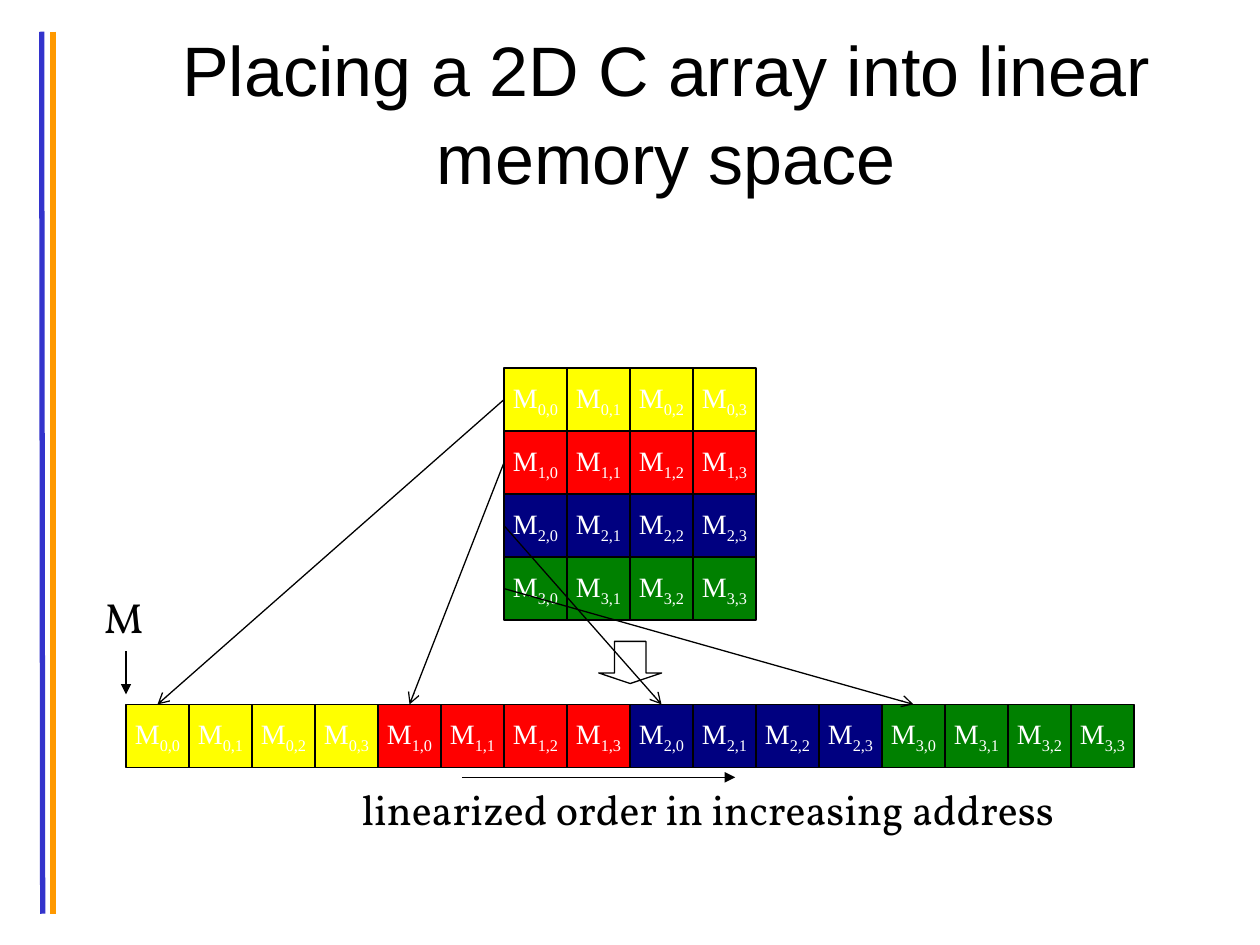
from lxml.etree import SubElement
from pptx import Presentation
from pptx.dml.color import RGBColor
from pptx.enum.shapes import MSO_CONNECTOR, MSO_SHAPE
from pptx.enum.text import MSO_ANCHOR, PP_ALIGN
from pptx.oxml.ns import qn
from pptx.util import Cm, Pt

SIDE = 1.27  # cell side, in cm
COUNT = 4    # rows and columns of the array
ROWS = ["FFFF00", "FF0000", "000080", "008000"]
BLACK, WHITE = "000000", "FFFFFF"


def color(code):
    return RGBColor.from_string(code)


def add_run(para, text, size, font, code, base=None):
    run = para.add_run()
    run.text = text
    run.font.size = Pt(size)
    run.font.name = font
    run.font.color.rgb = color(code)
    if base:
        run.font._element.set("baseline", str(base))


def add_line(slide, start, end, code=BLACK, width=0.75, head=None):
    line = slide.shapes.add_connector(
        MSO_CONNECTOR.STRAIGHT, *(Cm(v) for v in (*start, *end)))
    line.line.color.rgb = color(code)
    line.line.width = Pt(width)
    if head:
        SubElement(line.line._get_or_add_ln(), qn("a:tailEnd"), type=head)
    SubElement(line._element.spPr, qn("a:effectLst"))
    return line


def add_shape(slide, kind, left, top, width, height, fill=None):
    shape = slide.shapes.add_shape(
        kind, Cm(left), Cm(top), Cm(width), Cm(height))
    shape.shadow.inherit = False
    if fill:
        shape.fill.solid()
        shape.fill.fore_color.rgb = color(fill)
    else:
        shape.fill.background()
    shape.line.color.rgb = color(BLACK)
    shape.line.width = Pt(0.75)
    return shape


def add_cell(slide, left, top, row, col):
    cell = add_shape(slide, MSO_SHAPE.RECTANGLE, left, top, SIDE, SIDE,
                     ROWS[row])
    frame = cell.text_frame
    frame.word_wrap = False
    frame.vertical_anchor = MSO_ANCHOR.MIDDLE
    para = frame.paragraphs[0]
    para.alignment = PP_ALIGN.CENTER
    add_run(para, "M", 16, "Times New Roman", WHITE)
    add_run(para, f"{row},{col}", 16, "Times New Roman", WHITE, -25000)
    return cell


def add_text(slide, text, left, top, width, height, size, font, wrap=False):
    box = slide.shapes.add_textbox(Cm(left), Cm(top), Cm(width), Cm(height))
    box.text_frame.word_wrap = wrap
    para = box.text_frame.paragraphs[0]
    add_run(para, text, size, font, BLACK)
    return box


def add_title(slide, text):
    box = add_text(slide, text, 1.9, 0.64, 23.06, 3.18, 40, "Arial", True)
    box.text_frame.vertical_anchor = MSO_ANCHOR.MIDDLE
    para = box.text_frame.paragraphs[0]
    para.alignment = PP_ALIGN.CENTER
    para.line_spacing = 1.05


def main():
    deck = Presentation()
    deck.slide_width, deck.slide_height = Cm(25.4), Cm(19.05)
    slide = deck.slides.add_slide(deck.slide_layouts[6])

    # Side rules and title
    add_line(slide, (0.84, 0.64), (0.86, 18.42), "3333CC", 3)
    add_line(slide, (1.07, 0.64), (1.07, 18.42), "FF9900", 3)
    add_title(slide, "Placing a 2D C array into linear memory space")

    # Square array and its linear layout
    firsts = []
    for row in range(COUNT):
        for col in range(COUNT):
            grid = add_cell(slide, 10.16 + col * SIDE, 7.42 + row * SIDE,
                            row, col)
            place = row * COUNT + col
            flat = add_cell(slide, 2.54 + place * SIDE, 14.2, row, col)
            if col == 0:
                firsts.append((grid, flat))

    # Start of the array in memory
    add_line(slide, (2.54, 13.13), (2.54, 14), head="triangle")
    add_text(slide, "M", 1.85, 11.79, 1.32, 1.27, 24, "Vollkorn")

    # Block arrow between the two views
    arrow = add_shape(slide, MSO_SHAPE.DOWN_ARROW, 12.07, 12.93, 1.27, 0.85)
    arrow.adjustments[0], arrow.adjustments[1] = 0.5, 0.25

    # Direction of growing addresses
    add_text(slide, "linearized order in increasing address",
             7.04, 15.67, 14.66, 1.27, 24, "Vollkorn")
    add_line(slide, (9.31, 15.67), (14.82, 15.67), head="triangle")

    # Each row's first cell to its place in memory
    for grid, flat in firsts:
        link = add_line(slide, (0, 0), (1, 1), head="arrow")
        link.begin_connect(grid, 1)
        link.end_connect(flat, 0)

    deck.save("out.pptx")


if __name__ == "__main__":
    main()
